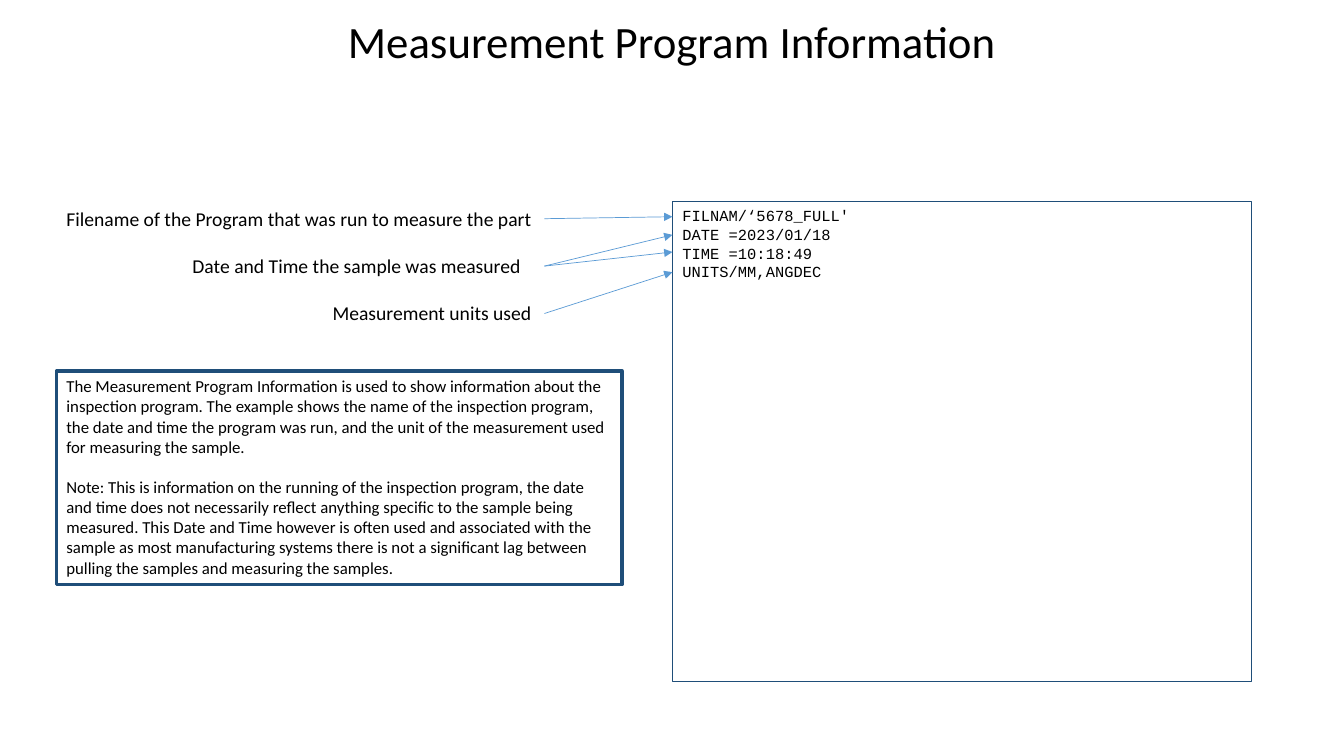
import dataclasses

import pptx
import pptx.dml.color
import pptx.enum.shapes
import pptx.enum.text
import pptx.oxml
import pptx.oxml.ns
import pptx.util

Inches = pptx.util.Inches
Pt = pptx.util.Pt
ALIGN = pptx.enum.text.PP_ALIGN
ANCHOR = pptx.enum.text.MSO_ANCHOR
AUTO_SIZE = pptx.enum.text.MSO_AUTO_SIZE


@dataclasses.dataclass(frozen=True)
class Theme:
    ink: str = "000000"
    border: str = "1F4E79"
    arrow: str = "5B9BD5"
    body_font: str = "Calibri"
    code_font: str = "Courier New"
    title_size: float = 32
    label_size: float = 14
    note_size: float = 12
    code_size: float = 11


def apply(target, formats):
    for attribute, value in formats.items():
        setattr(target, attribute, value)


def rgb(colour):
    return pptx.dml.color.RGBColor.from_string(colour)


class SlideBuilder:
    """Draws themed elements on one slide."""

    def __init__(self, slide, theme):
        self.shapes = slide.shapes
        self.theme = theme

    def fill_text(self, holder, paragraphs, size, font, frame_format, paragraph_format):
        frame = holder.text_frame
        apply(frame, frame_format)
        for index, wording in enumerate(paragraphs):
            paragraph = frame.add_paragraph() if index else frame.paragraphs[0]
            apply(paragraph, {"alignment": ALIGN.LEFT, **paragraph_format})
            if not index:
                paragraph.space_before = Pt(0)
            run = paragraph.add_run()
            run.text = wording
            apply(run.font, {"size": Pt(size), "name": font})
            run.font.color.rgb = rgb(self.theme.ink)

    def text(self, box, wording, size, frame_format, paragraph_format):
        holder = self.shapes.add_textbox(*map(Inches, box))
        self.fill_text(holder, [wording], size, self.theme.body_font,
                       frame_format, paragraph_format)

    def panel(self, box, paragraphs, size, font, border_width, frame_format,
              paragraph_format):
        panel = self.shapes.add_shape(
            pptx.enum.shapes.MSO_SHAPE.RECTANGLE, *map(Inches, box))
        panel.shadow.inherit = False
        panel.fill.background()
        panel.line.color.rgb = rgb(self.theme.border)
        panel.line.width = Pt(border_width)
        self.fill_text(panel, paragraphs, size, font,
                       {"word_wrap": True, "vertical_anchor": ANCHOR.TOP,
                        **frame_format},
                       paragraph_format)

    def arrow(self, start, end):
        arrow = self.shapes.add_connector(
            pptx.enum.shapes.MSO_CONNECTOR.STRAIGHT, *map(Inches, start + end))
        arrow.line.color.rgb = rgb(self.theme.arrow)
        arrow.line.width = Pt(0.5)
        namespace = pptx.oxml.ns.nsdecls("a")
        properties = arrow._element.spPr
        properties.find(pptx.oxml.ns.qn("a:ln")).append(
            pptx.oxml.parse_xml(f'<a:tailEnd {namespace} type="triangle"/>'))
        properties.append(pptx.oxml.parse_xml(f"<a:effectLst {namespace}/>"))


def main():
    presentation = pptx.Presentation()
    apply(presentation, {"slide_width": Inches(13.33), "slide_height": Inches(7.5)})
    theme = Theme()
    builder = SlideBuilder(
        presentation.slides.add_slide(presentation.slide_layouts[6]), theme)

    builder.text((0, 0, 13.33, 0.87), "Measurement Program Information",
                 theme.title_size,
                 {"word_wrap": True, "vertical_anchor": ANCHOR.MIDDLE},
                 {"alignment": ALIGN.CENTER, "line_spacing": 0.9})

    listing_left, listing_top = 6.67, 2
    program_listing = ["FILNAM/‘5678_FULL'", "DATE =2023/01/18",
                       "TIME =10:18:49", "UNITS/MM,ANGDEC"]
    builder.panel((listing_left, listing_top, 5.74, 4.76), program_listing,
                  theme.code_size, theme.code_font, 0.75, {},
                  {"line_spacing": Pt(13.25)})

    labels_right, label_height, label_pitch = 5.4, 0.34, 0.47
    explanations = [
        ("Filename of the Program that was run to measure the part", 4.84, [2.15]),
        ("Date and Time the sample was measured", 3.59, [2.33, 2.5]),
        ("Measurement units used", 2.2, [2.7]),
    ]
    for row, (explanation, width, listing_lines) in enumerate(explanations):
        top = listing_top + row * label_pitch
        builder.text((labels_right - width, top, width, label_height), explanation,
                     theme.label_size,
                     {"word_wrap": False, "auto_size": AUTO_SIZE.SHAPE_TO_FIT_TEXT}, {})
        for line_y in listing_lines:
            builder.arrow((labels_right, top + label_height / 2),
                          (listing_left, line_y))

    program_notes = [
        "The Measurement Program Information is used to show information about the "
        "inspection program. The example shows the name of the inspection program, "
        "the date and time the program was run, and the unit of the measurement used "
        "for measuring the sample.",
        "Note: This is information on the running of the inspection program, the date "
        "and time does not necessarily reflect anything specific to the sample being "
        "measured. This Date and Time however is often used and associated with the "
        "sample as most manufacturing systems there is not a significant lag between "
        "pulling the samples and measuring the samples.",
    ]
    builder.panel((0.56, 3.68, 5.61, 2.12), program_notes, theme.note_size,
                  theme.body_font, 2.25,
                  {"auto_size": AUTO_SIZE.SHAPE_TO_FIT_TEXT},
                  {"space_before": Pt(14.4)})

    presentation.save("out.pptx")


if __name__ == "__main__":
    main()
